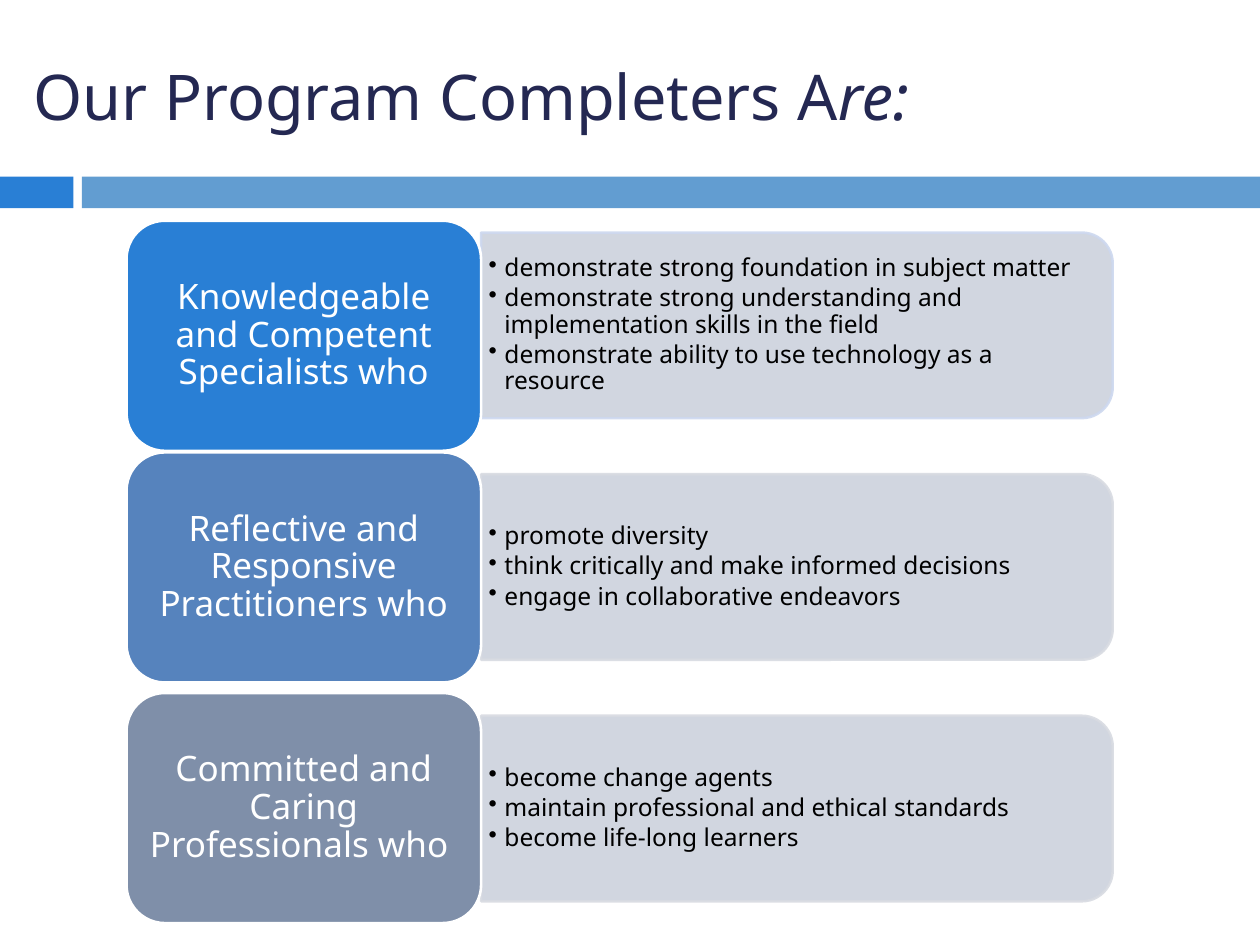
import pptx
import pptx.util
import pptx.dml.color
import pptx.enum.shapes
import pptx.enum.text
import pptx.oxml.ns
import lxml.etree

Cm, Pt = pptx.util.Cm, pptx.util.Pt
MSO = pptx.enum.shapes.MSO_SHAPE
MIDDLE = pptx.enum.text.MSO_ANCHOR.MIDDLE
qn = pptx.oxml.ns.qn
FONT = "Noto Sans"
COLORS = {
    "title": "242852", "accent": "297FD5", "band": "629DD1",
    "panel": "CCD2DD", "white": "FFFFFF", "black": "000000",
}


def rgb(value):
    return pptx.dml.color.RGBColor.from_string(value)


def add_box(kind, x, y, w, h, fill, line=None, opacity=100):
    """Add a preset shape, measured in centimetres."""
    sp = s.shapes.add_shape(kind, Cm(x), Cm(y), Cm(w), Cm(h))
    sp.shadow.inherit = False
    sp.fill.solid()
    sp.fill.fore_color.rgb = rgb(fill)
    if line:
        sp.line.color.rgb = rgb(line)
        sp.line.width = Pt(1.5)
    else:
        sp.line.fill.background()
    if opacity < 100:
        for clr in sp._element.spPr.iter(qn("a:srgbClr")):
            lxml.etree.SubElement(clr, qn("a:alpha"), val=str(opacity * 1000))
    return sp


prs = pptx.Presentation()
prs.slide_width, prs.slide_height = Cm(25.4), Cm(19.05)
s = prs.slides.add_slide(prs.slide_layouts[6])

# Band under the title
add_box(MSO.RECTANGLE, 0, 3.56, 1.48, 0.64, COLORS["accent"])
add_box(MSO.RECTANGLE, 1.65, 3.56, 23.75, 0.64, COLORS["band"])

# Title
tf = s.shapes.add_textbox(Cm(0.43), Cm(0.43), Cm(19.25), Cm(2.97)).text_frame
tf.word_wrap = True
tf.vertical_anchor = MIDDLE
p = tf.paragraphs[0]
p.font.name, p.font.size = FONT, Pt(36)
p.font.color.rgb = rgb(COLORS["title"])
p.add_run().text = "Our Program Completers A"
r = p.add_run()
r.text = "re:"
r.font.italic = True

# Rows: label, label top, label fill, panel outline, bullets
rows = [
    ("Knowledgeable and Competent Specialists who", 4.45, COLORS["accent"], "CDD8EF",
     ["demonstrate strong foundation in subject matter",
      "demonstrate strong understanding and implementation skills in the field",
      "demonstrate ability to use technology as a resource"]),
    ("Reflective and Responsive Practitioners who", 9.12, "5683BD", "D8DBE2",
     ["promote diversity",
      "think critically and make informed decisions",
      "engage in collaborative endeavors"]),
    ("Committed and Caring Professionals who ", 13.97, "7F8FA9", "D8DBE2",
     ["become change agents",
      "maintain professional and ethical standards",
      "become life-long learners"]),
]
LABEL_X, LABEL_W, LABEL_H = 2.55, 7.15, 4.64
PANEL_X, PANEL_W, PANEL_H = LABEL_X + LABEL_W, 12.73, 3.74
TEXT_W, TEXT_H = 12.55, 3.35
FIRST_CENTER, PITCH = 6.56, 4.87

for i, (label, top, fill, outline, bullets) in enumerate(rows):
    center = FIRST_CENTER + i * PITCH

    # Panel, turned so that its rounded corners face right
    sp = add_box(MSO.ROUND_2_SAME_RECTANGLE, PANEL_X + (PANEL_W - PANEL_H) / 2,
                 center - PANEL_W / 2, PANEL_H, PANEL_W,
                 COLORS["panel"], outline, 90)
    sp.rotation = 90

    # Bullets
    tf = s.shapes.add_textbox(Cm(PANEL_X), Cm(center - TEXT_H / 2),
                              Cm(TEXT_W), Cm(TEXT_H)).text_frame
    tf.word_wrap = True
    tf.vertical_anchor = MIDDLE
    tf.margin_left = tf.margin_right = Cm(0.15)
    tf.margin_top = tf.margin_bottom = Cm(0.08)
    for n, bullet in enumerate(bullets):
        p = tf.add_paragraph() if n else tf.paragraphs[0]
        p.text = bullet
        p.line_spacing, p.space_after = 0.9, Pt(2.1)
        p.font.name, p.font.size = FONT, Pt(14)
        p.font.color.rgb = rgb(COLORS["black"])
        pPr = p._p.get_or_add_pPr()
        pPr.set("marL", str(Cm(0.32)))
        pPr.set("indent", str(-Cm(0.32)))
        mark = lxml.etree.Element(qn("a:buChar"), char="•")
        pPr.find(qn("a:defRPr")).addprevious(mark)

    # Label
    sp = add_box(MSO.ROUNDED_RECTANGLE, LABEL_X, top, LABEL_W, LABEL_H,
                 fill, COLORS["white"])
    tf = sp.text_frame
    tf.word_wrap = True
    tf.vertical_anchor = MIDDLE
    tf.margin_left = tf.margin_right = Cm(0.2)
    tf.margin_top = tf.margin_bottom = Cm(0.1)
    p = tf.paragraphs[0]
    p.text = label
    p.alignment = pptx.enum.text.PP_ALIGN.CENTER
    p.line_spacing = 0.9
    p.font.name, p.font.size = FONT, Pt(20)
    p.font.color.rgb = rgb(COLORS["white"])

prs.save("out.pptx")
